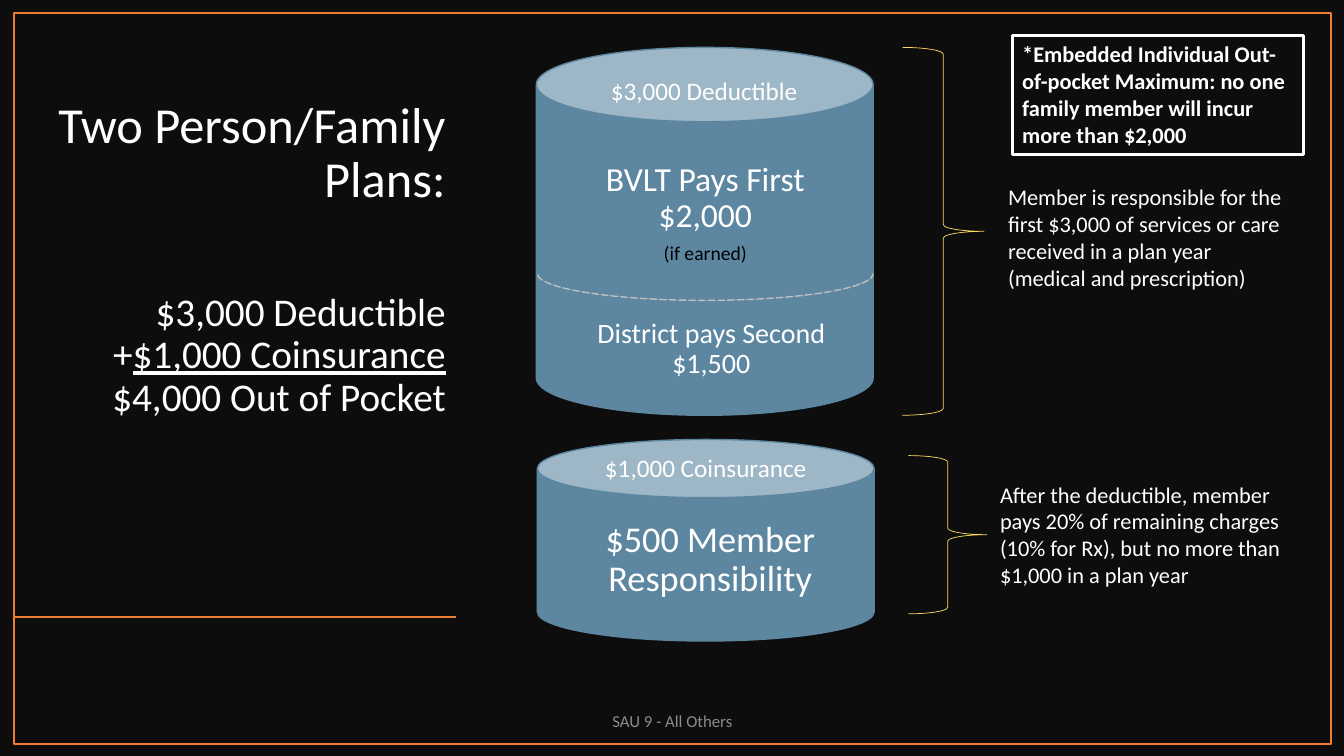
from lxml import etree
from pptx import Presentation
from pptx.dml.color import RGBColor
from pptx.enum.dml import MSO_LINE
from pptx.enum.shapes import MSO_CONNECTOR, MSO_SHAPE
from pptx.enum.text import MSO_ANCHOR, MSO_AUTO_SIZE, PP_ALIGN
from pptx.oxml.ns import qn
from pptx.util import Inches, Pt

COLORS = {
    "night": "0D0D0D", "orange": "ED7D31", "steel": "5D87A1", "gold": "FFD966",
    "white": "FFFFFF", "black": "000000", "dash": "BFBFBF", "footer": "8C8C8C",
}
FONT = "Calibri"
LEFT, CENTER, RIGHT = PP_ALIGN.LEFT, PP_ALIGN.CENTER, PP_ALIGN.RIGHT
TOP, MIDDLE = MSO_ANCHOR.TOP, MSO_ANCHOR.MIDDLE
CAN, BRACE = MSO_SHAPE.CAN, MSO_SHAPE.RIGHT_BRACE
ARC, RECTANGLE = MSO_SHAPE.BLOCK_ARC, MSO_SHAPE.RECTANGLE
STRAIGHT, DASH, NO_FIT = MSO_CONNECTOR.STRAIGHT, MSO_LINE.DASH, MSO_AUTO_SIZE.NONE


def color(name):
    """Return the named colour."""
    return RGBColor.from_string(COLORS[name])


def style(para, size, align=LEFT, ink="white", bold=False, spacing=1.0, after=0):
    """Format a whole paragraph."""
    para.alignment, para.line_spacing = align, spacing
    para.space_before, para.space_after = Pt(0), Pt(after)
    font = para.font
    font.name, font.size, font.bold = FONT, Pt(size), bold
    font.color.rgb = color(ink)


def add_outline(page, kind, box, line, width=1, fill=None):
    """Draw a preset shape with a coloured outline."""
    shape = page.shapes.add_shape(kind, *map(Inches, box))
    shape.shadow.inherit = False
    if fill:
        shape.fill.solid()
        shape.fill.fore_color.rgb = color(fill)
    else:
        shape.fill.background()
    shape.line.color.rgb = color(line)
    shape.line.width = Pt(width)
    return shape


def write(shape, lines, anchor=TOP):
    """Fill a shape with (text, format) paragraphs."""
    frame = shape.text_frame
    frame.word_wrap = True
    frame.vertical_anchor = anchor
    for index, (text, options) in enumerate(lines):
        para = frame.add_paragraph() if index else frame.paragraphs[0]
        para.text = text
        style(para, **options)


def add_text(page, box, *lines, anchor=TOP):
    """Place a text box."""
    write(page.shapes.add_textbox(*map(Inches, box)), lines, anchor)


def add_frame(page, box):
    """Draw the page border and the rule under the title."""
    left, top, width, height = box
    add_outline(page, RECTANGLE, box, "orange")
    rule = page.shapes.add_connector(
        STRAIGHT, Inches(left + 4.38), Inches(top + 5.99),
        Inches(left), Inches(top + 5.99))
    rule.line.color.rgb = color("orange")
    rule.line.width = Pt(1)
    etree.SubElement(rule._element.spPr, qn("a:effectLst"))


def add_title(page, box):
    """Write the title and the out-of-pocket sum."""
    title = page.shapes.title
    title.left, title.top, title.width, title.height = map(Inches, box)
    sums = {"size": 28, "align": RIGHT, "spacing": 0.9}
    write(title, [
        ("Two Person/Family Plans:", {**sums, "size": 36, "after": 60}),
        ("$3,000 Deductible", sums),
        ("+", sums),
        ("$4,000 Out of Pocket", sums),
    ])
    frame = title.text_frame
    frame.auto_size = NO_FIT
    frame.margin_top = Inches(0.26)
    span = frame.paragraphs[2].add_run()
    span.text = "$1,000 Coinsurance"
    span.font.underline = True


def add_deductible(page, box):
    """Draw the deductible can with its two payers."""
    left, top, width, height = box
    can = add_outline(page, CAN, box, "steel", fill="steel")
    can.adjustments[0] = 0.221
    add_text(page, (left + 0.64, top + 0.23, 2.06, 0.4),
             ("$3,000 Deductible", {"size": 18}))
    body = {"size": 24, "align": CENTER, "spacing": 0.9, "after": 6}
    add_text(page, (left + 0.28, top + 1.05, 2.79, 1.31),
             ("BVLT Pays First", {"size": 24, "align": CENTER}),
             ("$2,000", body),
             ("(if earned)", {**body, "size": 14, "ink": "black"}))
    add_text(page, (left + 0.13, top + 2.65, 3.21, 0.63),
             ("District pays Second\n$1,500", {**body, "size": 20}))
    divider = add_outline(page, ARC, (left + 0.01, top + 1.98, width - 0.01, 0.53),
                          "dash", fill="white")
    divider.rotation = 180
    for index, value in enumerate((108, 0, 0)):
        divider.adjustments[index] = value
    divider.line.dash_style = DASH


def add_coinsurance(page, box):
    """Draw the coinsurance can."""
    left, top, width, height = box
    can = add_outline(page, CAN, box, "steel", fill="steel")
    can.adjustments[0] = 0.289
    add_text(page, (left + 0.51, top + 0.76, 2.41, 0.95),
             ("$500 Member Responsibility",
              {"size": 25.9, "align": CENTER, "spacing": 0.9, "after": 6}))
    add_text(page, (left + 0.55, top + 0.08, 2.24, 0.4),
             ("$1,000 Coinsurance", {"size": 18, "align": CENTER}))


def add_explanation(page, brace_box, text_box, text):
    """Draw a brace and the note it points to."""
    add_outline(page, BRACE, brace_box, "gold", 0.5)
    add_text(page, text_box, (text, {"size": 16}))


def add_maximum(page, box):
    """Draw the boxed note on the individual maximum."""
    note = add_outline(page, RECTANGLE, box, "white", 2.25)
    write(note, [("*Embedded Individual Out-of-pocket Maximum: no one family "
                  "member will incur more than $2,000", {"size": 16, "bold": True})])


def main():
    """Build the plan slide."""
    deck = Presentation()
    deck.slide_width, deck.slide_height = Inches(13.33), Inches(7.5)
    page = deck.slides.add_slide(deck.slide_layouts[5])
    page.background.fill.solid()
    page.background.fill.fore_color.rgb = color("night")
    add_title(page, (0.35, 0.73, 4.17, 5.26))
    add_frame(page, (0.14, 0.13, 13.06, 7.25))
    add_coinsurance(page, (5.33, 4.36, 3.34, 2))
    add_explanation(page, (9.01, 4.52, 0.78, 1.57), (9.82, 4.72, 3.06, 1.18),
                    "After the deductible, member pays 20% of remaining charges "
                    "(10% for Rx), but no more than $1,000 in a plan year")
    add_deductible(page, (5.32, 0.47, 3.34, 3.65))
    add_explanation(page, (8.95, 0.47, 0.81, 3.65), (9.9, 1.77, 2.93, 1.18),
                    "Member is responsible for the first $3,000 of services or care "
                    "received in a plan year (medical and prescription)")
    add_maximum(page, (10.04, 0.35, 2.89, 1.18))
    add_text(page, (4.42, 6.95, 4.5, 0.4),
             ("SAU 9 - All Others", {"size": 12, "align": CENTER, "ink": "footer"}),
             anchor=MIDDLE)
    deck.save("out.pptx")


if __name__ == "__main__":
    main()
